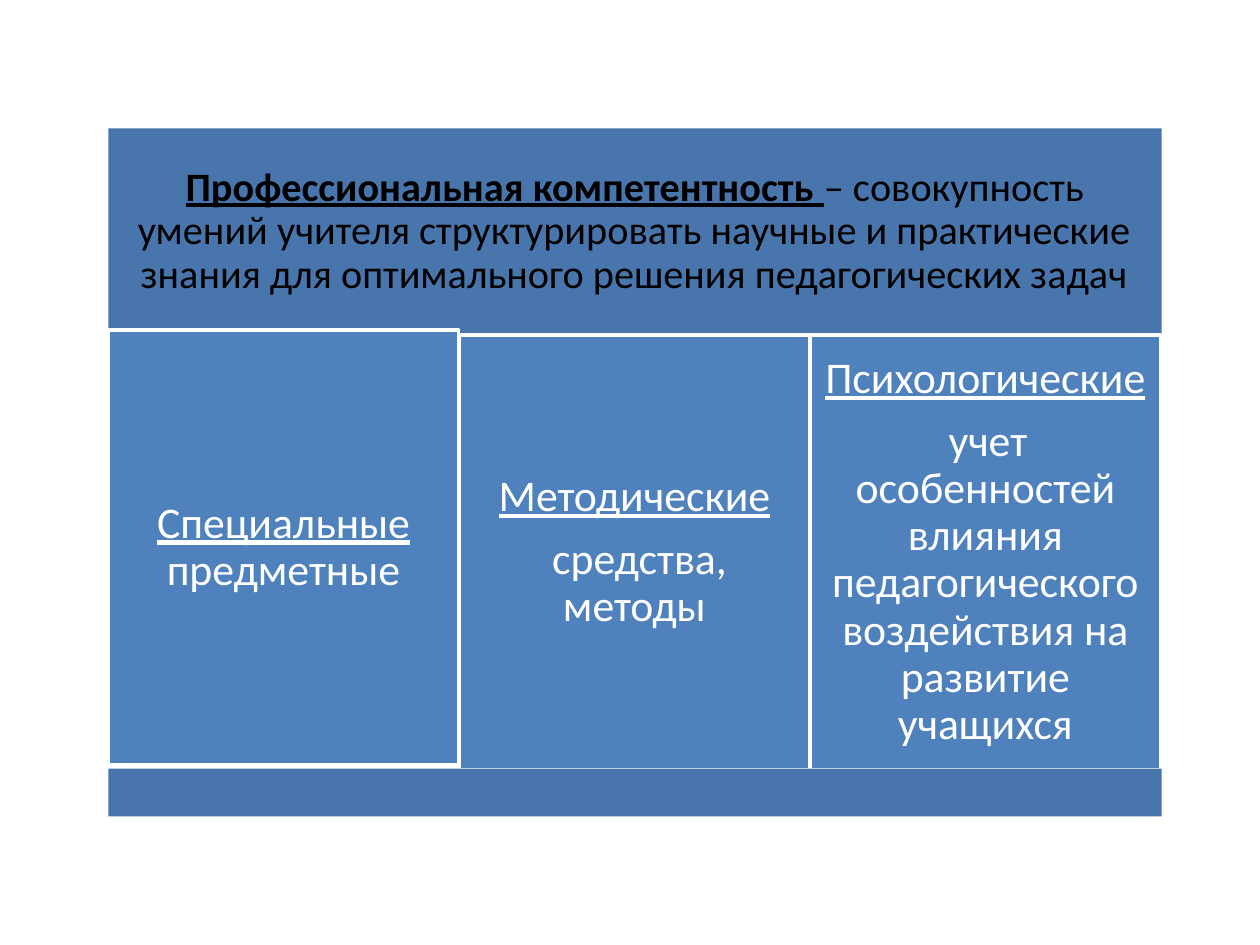
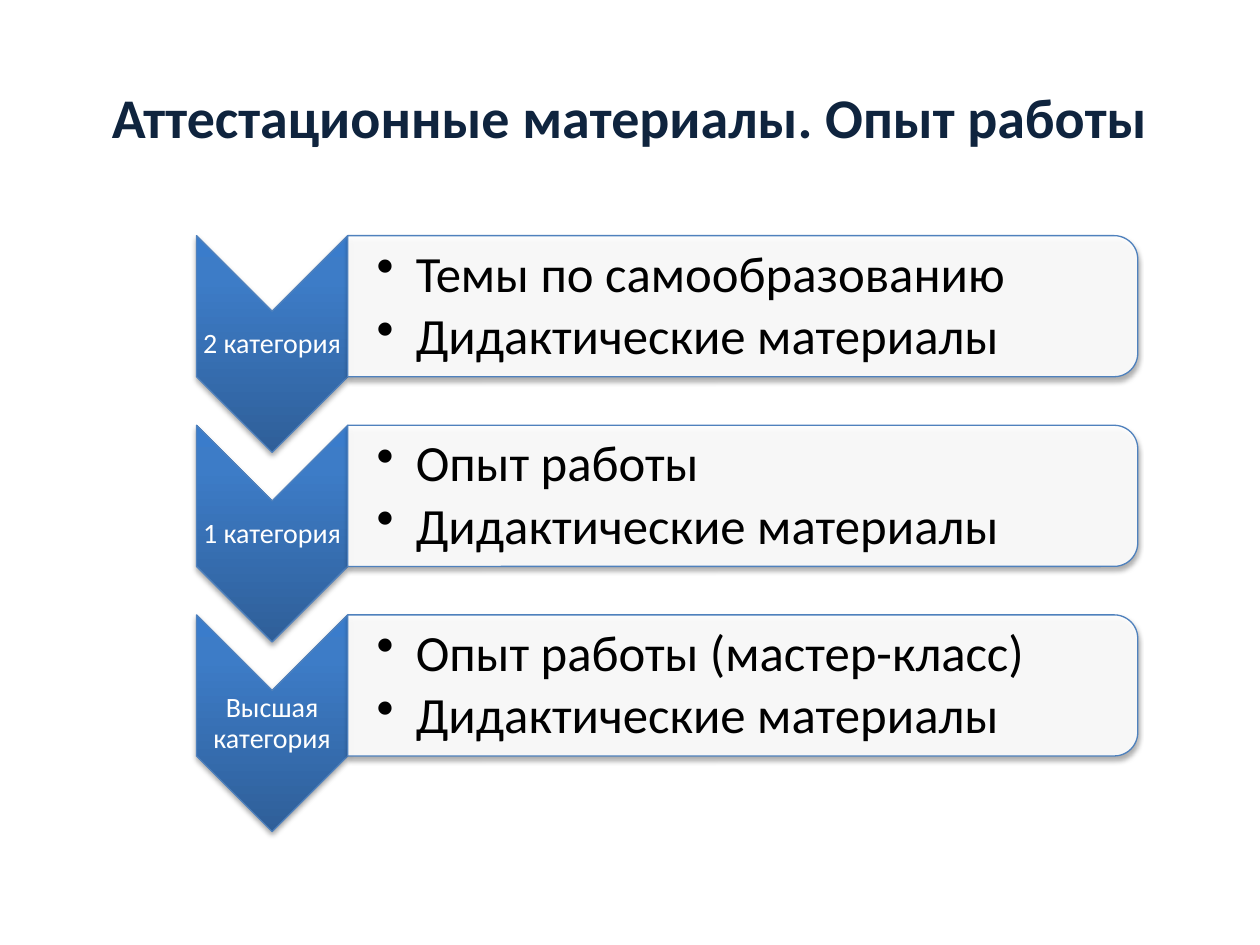
from lxml import etree
from pptx import Presentation
from pptx.dml.color import RGBColor
from pptx.enum.shapes import MSO_SHAPE
from pptx.enum.text import MSO_ANCHOR, PP_ALIGN
from pptx.oxml import parse_xml
from pptx.oxml.ns import nsdecls, qn
from pptx.util import Emu, Pt

RECT = MSO_SHAPE.RECTANGLE
CHEVRON = MSO_SHAPE.CHEVRON
ROUND_TOP = MSO_SHAPE.ROUND_2_SAME_RECTANGLE
MIDDLE = MSO_ANCHOR.MIDDLE
LEFT, CENTER = PP_ALIGN.LEFT, PP_ALIGN.CENTER

PX = 4572  # EMU per px, 200 px to the inch
FONT = "Calibri"
TITLE_ONLY, BLANK = 5, 6
COLORS = {
    "band": "4875AC", "column": "4F81BD", "white": "FFFFFF", "black": "000000",
    "title": "0F243E", "deep": "2F5F99", "bright": "3D7CC7", "top": "3A7CCB",
}


def px(*lengths):
    return [Emu(length * PX) for length in lengths]


def rgb(name):
    return RGBColor.from_string(COLORS[name])


def write(paragraph, text, *, size, color, bold=False, underline=False):
    run = paragraph.add_run()
    run.text = text
    run.font.name = FONT
    run.font.size = Pt(size)
    run.font.bold = bold
    run.font.underline = underline
    run.font.color.rgb = rgb(color)


class Deck:
    """Holds the shared style and the current slide."""

    def __init__(self):
        self.prs = Presentation()
        self.prs.slide_width, self.prs.slide_height = px(2000, 1500)
        self.slide = None

    def new_slide(self, layout):
        self.slide = self.prs.slides.add_slide(self.prs.slide_layouts[layout])

    def title(self, text):
        title = self.slide.shapes.title
        title.left, title.top, title.width, title.height = px(100, 60, 1800, 250)
        frame = title.text_frame
        frame.vertical_anchor = MIDDLE
        frame.paragraphs[0].alignment = CENTER
        write(frame.paragraphs[0], text, size=32, color="title", bold=True)

    def block(self, box, fill, line=None):
        block = self.slide.shapes.add_shape(RECT, *px(*box))
        block.shadow.inherit = False
        block.fill.solid()
        block.fill.fore_color.rgb = rgb(fill)
        if line:
            block.line.color.rgb = rgb(line)
            block.line.width = Pt(2)
        else:
            block.line.fill.background()
        return block.text_frame

    def turned(self, kind, box, gradient=None):
        """Place a shape turned by 90 degrees so that it covers the given box."""
        left, top, width, height = box
        shift = (width - height) // 2
        shape = self.slide.shapes.add_shape(
            kind, *px(left + shift, top - shift, height, width))
        shape.rotation = 90
        if gradient:
            stops = "".join(f'<a:gs pos="{pos * 1000}"><a:srgbClr val="{COLORS[name]}"/></a:gs>'
                            for pos, name in gradient)
            shape._element.spPr.append(parse_xml(
                f'<a:gradFill {nsdecls("a")} rotWithShape="0"><a:gsLst>{stops}</a:gsLst>'
                '<a:lin ang="16200000" scaled="0"/></a:gradFill>'))
        else:
            shape.fill.solid()
            shape.fill.fore_color.rgb = rgb("white")
            white = shape._element.spPr.find(".//" + qn("a:srgbClr"))
            etree.SubElement(white, qn("a:alpha"), val="90000")
        shape.line.color.rgb = rgb("column")
        shape.line.width = Pt(0.75)
        self.soft_shadow(shape)

    def soft_shadow(self, shape):
        shape.shadow.inherit = False
        shape._element.spPr.find(qn("a:effectLst")).append(parse_xml(
            f'<a:outerShdw {nsdecls("a")} blurRad="40000" dist="23000" dir="5400000" '
            f'rotWithShape="0"><a:srgbClr val="{COLORS["black"]}"><a:alpha val="35000"/>'
            '</a:srgbClr></a:outerShdw>'))

    def text_box(self, box):
        return self.slide.shapes.add_textbox(*px(*box)).text_frame

    def frame(self, frame, inset, left_inset=None):
        frame.word_wrap = True
        frame.vertical_anchor = MIDDLE
        frame.margin_top = frame.margin_right = frame.margin_bottom = Emu(inset * PX)
        frame.margin_left = Emu((left_inset or inset) * PX)

    def paragraph(self, frame, runs, size, color, indent=0, bullet=False):
        """Add one paragraph; runs are (text, format) pairs."""
        first = frame.paragraphs[0]
        paragraph = frame.add_paragraph() if first.runs else first
        paragraph.alignment = LEFT if bullet else CENTER
        paragraph.line_spacing = 0.9
        paragraph.space_after = Pt(round(size * (0.15 if bullet else 0.35), 2))
        props = paragraph._p.get_or_add_pPr()
        props.set("indent", str(indent * PX))
        if bullet:
            props.set("marL", str(-indent * PX))
            etree.SubElement(props, qn("a:buChar"), char="•")
        for text, style in runs:
            write(paragraph, text, size=size, color=color, **style)


def competence_slide(deck):
    deck.new_slide(BLANK)
    left, width = 172, 1672

    # Definition band
    definition = deck.block((left, 204, width, 328), "band")
    deck.frame(definition, 20)
    deck.paragraph(definition, [
        ("Профессиональная компетентность ", {"bold": True, "underline": True}),
        ("– совокупность умений учителя структурировать научные и практические "
         "знания для оптимального решения педагогических задач", {}),
    ], 23, "black")

    # Three kinds of skills: top, then paragraphs of (indent, runs)
    heading = {"underline": True}
    skills = [
        (524, [(0, [("Специальные ", heading), ("предметные", {})])]),
        (532, [(0, [("Методические", heading)]), (16, [("средства, методы", {})])]),
        (532, [(0, [("Психологические", heading)]),
               (8, [("учет особенностей влияния педагогического воздействия "
                     "на развитие учащихся", {})])]),
    ]
    for i, (top, paragraphs) in enumerate(skills):
        column = deck.block((left + i * 557, top, 556, 690), "column", line="white")
        deck.frame(column, 20)
        for indent, runs in paragraphs:
            deck.paragraph(column, runs, 25, "white", indent=indent)

    # Closing band
    deck.block((left, 1220, width, 76), "band")


def attestation_slide(deck):
    deck.new_slide(TITLE_ONLY)
    deck.title("Аттестационные материалы. Опыт работы")

    gradient = [(0, "deep"), (80, "bright"), (100, "top")]
    didactic = "Дидактические материалы"
    categories = [
        ("2 категория", ["Темы по самообразованию", didactic]),
        ("1 категория", ["Опыт работы", didactic]),
        ("Высшая категория", ["Опыт работы (мастер-класс)", didactic]),
    ]
    for i, (category, materials) in enumerate(categories):
        top = 374 + i * 301

        # Category arrow
        deck.turned(CHEVRON, (312, top, 240, 344), gradient)
        label = deck.text_box((312, top + 122, 240, 102))
        deck.frame(label, 2)
        deck.paragraph(label, [(category, {})], 16, "white")

        # Materials panel
        deck.turned(ROUND_TOP, (552, top, 1254, 224))
        listing = deck.text_box((552, top + 12, 1244, 202))
        deck.frame(listing, 4, left_inset=46)
        for material in materials:
            deck.paragraph(listing, [(material, {})], 29, "black", indent=-62, bullet=True)


def main():
    deck = Deck()
    competence_slide(deck)
    attestation_slide(deck)
    deck.prs.save("out.pptx")


if __name__ == "__main__":
    main()
